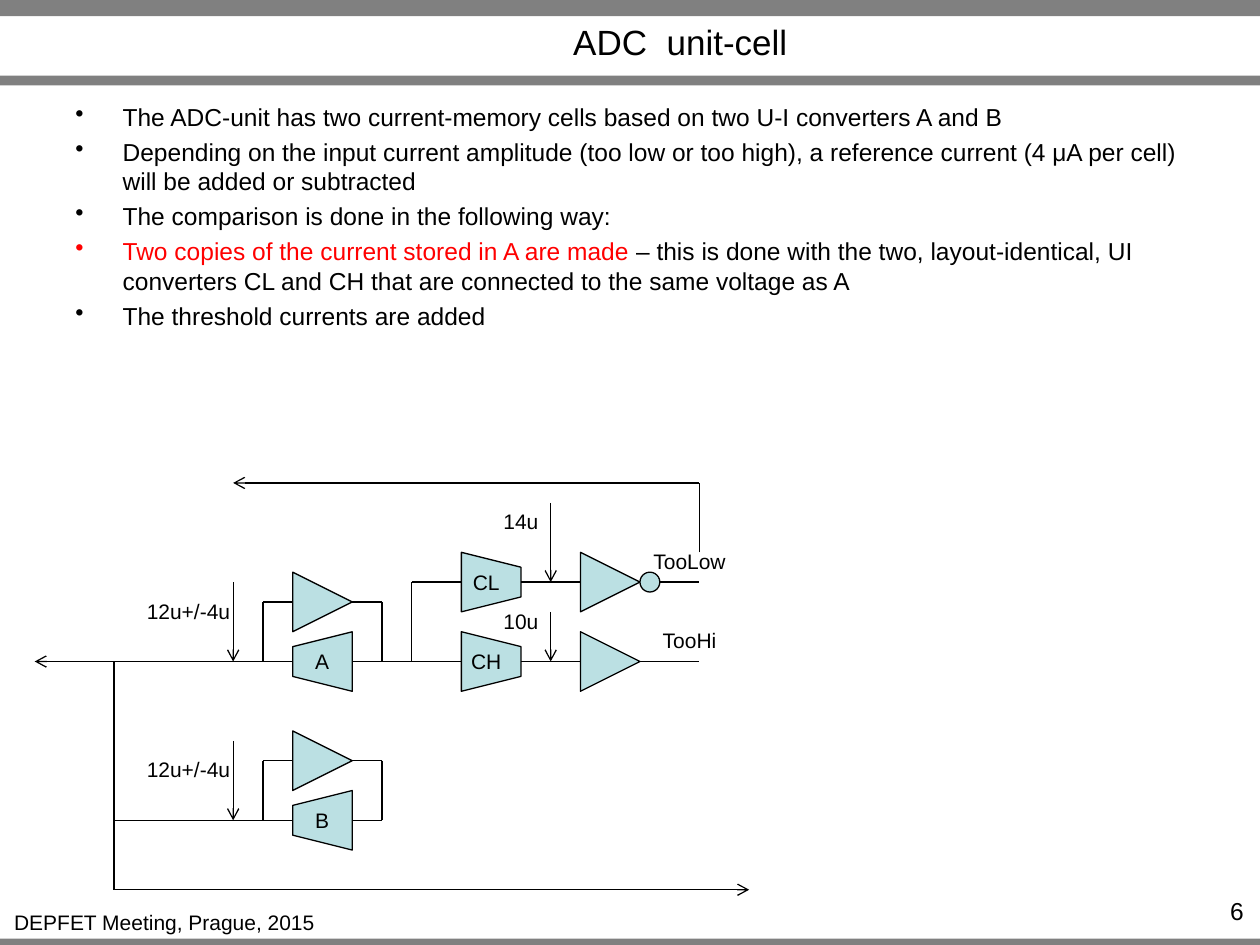
from lxml import etree
from pptx import Presentation
from pptx.dml.color import RGBColor
from pptx.enum.shapes import MSO_CONNECTOR as Conn, MSO_SHAPE as Geo
from pptx.enum.text import MSO_ANCHOR as Anchor, PP_ALIGN as Align
from pptx.oxml.ns import qn
from pptx.util import Pt

BLACK = RGBColor(0, 0, 0)
RED = RGBColor(255, 0, 0)
GRAY = RGBColor(128, 128, 128)
TEAL = RGBColor(0xBB, 0xE0, 0xE3)
STEP = 5.67  # circuit grid pitch
CELL = 6  # side of a circuit block, in grid steps

BULLETS = [
    [("The ADC-unit has two current-memory cells based on two U-I "
      "converters A and B", BLACK)],
    [("Depending on the input current amplitude (too low or too high), a "
      "reference current (4 μA per cell) will be added or subtracted", BLACK)],
    [("The comparison is done in the following way:", BLACK)],
    [("Two copies of the current stored in A are made", RED),
     (" – this is done with the two, layout-identical, UI converters CL and "
      "CH that are connected to the same voltage as A", BLACK)],
    [("The threshold currents are added", BLACK)],
]


def gx(col):
    return Pt(2.84 + col * STEP)


def gy(row):
    return Pt(3.8 + row * STEP)


def add_run(para, text, size, color=BLACK):
    run = para.add_run()
    run.text = text
    run.font.name = "Arial"
    run.font.size = Pt(size)
    run.font.color.rgb = color


def add_text(slide, box, text, size, align=Align.CENTER, wrap=True,
             anchor=Anchor.TOP):
    frame = slide.shapes.add_textbox(*box).text_frame
    frame.word_wrap = wrap
    frame.vertical_anchor = anchor
    para = frame.paragraphs[0]
    para.alignment = align
    add_run(para, text, size)


def add_list(slide, box):
    frame = slide.shapes.add_textbox(*box).text_frame
    frame.word_wrap = True
    for i, runs in enumerate(BULLETS):
        para = frame.add_paragraph() if i else frame.paragraphs[0]
        if i:
            para.space_before = Pt(3.2)
        props = para._p.get_or_add_pPr()
        props.set("marL", str(Pt(27)))
        props.set("indent", str(Pt(-27)))
        etree.SubElement(props, qn("a:buChar"), char="•")
        for text, color in runs:
            add_run(para, text, 14, color)


def add_band(slide, top, high):
    band = slide.shapes.add_shape(Geo.RECTANGLE, 0, Pt(top), Pt(720), Pt(high))
    band.shadow.inherit = False
    band.fill.solid()
    band.fill.fore_color.rgb = GRAY
    band.line.fill.background()


def add_wire(slide, *points, arrow=False):
    """Join grid points by straight lines; the last may carry an arrowhead."""
    for i, (start, end) in enumerate(zip(points, points[1:]), 2):
        wire = slide.shapes.add_connector(
            Conn.STRAIGHT, gx(start[0]), gy(start[1]), gx(end[0]), gy(end[1]))
        wire.line.color.rgb = BLACK
        wire.line.width = Pt(0.75)
        if arrow and i == len(points):
            etree.SubElement(wire.line._get_or_add_ln(), qn("a:tailEnd"),
                             type="arrow")
        etree.SubElement(wire._element.spPr, qn("a:effectLst"))


def add_block(slide, geo, col, row, turn=0, side=CELL):
    """Draw a circuit block; row is that of its centre."""
    block = slide.shapes.add_shape(geo, gx(col), gy(row - side / 2),
                                   Pt(side * STEP), Pt(side * STEP))
    block.rotation = turn
    block.shadow.inherit = False
    block.fill.solid()
    block.fill.fore_color.rgb = TEAL
    block.line.color.rgb = BLACK
    block.line.width = Pt(0.75)
    return block


def add_gm(slide, name, col, row, turn, vert):
    """Draw a U-I converter whose name stays upright."""
    frame = add_block(slide, Geo.TRAPEZOID, col, row, turn).text_frame
    frame.word_wrap = False
    frame.vertical_anchor = Anchor.MIDDLE
    frame._txBody.bodyPr.set("vert", vert)
    para = frame.paragraphs[0]
    para.alignment = Align.CENTER
    add_run(para, name, 12)


def add_label(slide, text, mid, row):
    wide = 12 * STEP
    box = gx(mid) - Pt(wide / 2), gy(row), Pt(wide), Pt(21.6)
    add_text(slide, box, text, 12, wrap=False)


def add_cell(slide, name, row):
    """Draw a current-memory cell with its feedback loop and bias."""
    add_wire(slide, (11, row), (29, row))
    add_wire(slide, (26, row), (26, row - 6), (29, row - 6))
    add_wire(slide, (35, row - 6), (38, row - 6), (38, row), (35, row))
    add_wire(slide, (23, row - 8), (23, row), arrow=True)
    add_block(slide, Geo.ISOSCELES_TRIANGLE, 29, row - 6, 90)
    add_gm(slide, name, 29, row, 270, "eaVert")
    add_label(slide, "12u+/-4u", 18.5, row - 7)


def add_comp(slide, name, row, bias, top, out, out_row):
    """Draw a comparator branch with its threshold current."""
    add_wire(slide, (41, row), (46, row))
    add_wire(slide, (52, row), (58, row))
    add_wire(slide, (64, row), (70, row))
    add_wire(slide, (55, top), (55, row), arrow=True)
    add_gm(slide, name, 46, row, 90, "vert270")
    add_block(slide, Geo.ISOSCELES_TRIANGLE, 58, row, 90)
    add_label(slide, bias, 52, row - 8 if top == 50 else row - 6)
    add_label(slide, out, 69, out_row)


def main():
    prs = Presentation()
    prs.slide_width, prs.slide_height = Pt(720), Pt(540)
    slide = prs.slides.add_slide(prs.slide_layouts[6])

    # Frame, title and footer
    for top, high in ((0, 9.2), (43.2, 5.6), (536.4, 3.6)):
        add_band(slide, top, high)
    add_text(slide, (Pt(93.6), Pt(10.1), Pt(590.4), Pt(27.4)),
             "ADC  unit-cell", 20, anchor=Anchor.MIDDLE)
    add_text(slide, (0, Pt(516.2), Pt(188), Pt(21.6)),
             "DEPFET Meeting, Prague, 2015", 12, wrap=False)
    add_text(slide, (Pt(655.2), Pt(508.3), Pt(62.6), Pt(17.3)),
             "6", 14, Align.RIGHT)

    # Explanation
    add_list(slide, (Pt(36), Pt(54.7), Pt(648), Pt(141.8)))

    # Memory cells and comparators
    add_cell(slide, "A", 66)
    add_cell(slide, "B", 82)
    add_wire(slide, (35, 66), (41, 66), (41, 58))
    add_comp(slide, "CL", 58, "14u", 50, "TooLow", 54)
    add_comp(slide, "CH", 66, "10u", 61, "TooHi", 62)
    add_block(slide, Geo.OVAL, 64, 58, side=2)

    # Input, output and feedback lines
    add_wire(slide, (11, 66), (3, 66), arrow=True)
    add_wire(slide, (11, 66), (11, 89), (75, 89), arrow=True)
    add_wire(slide, (70, 55), (70, 48), (23, 48), arrow=True)

    prs.save("out.pptx")


if __name__ == "__main__":
    main()
